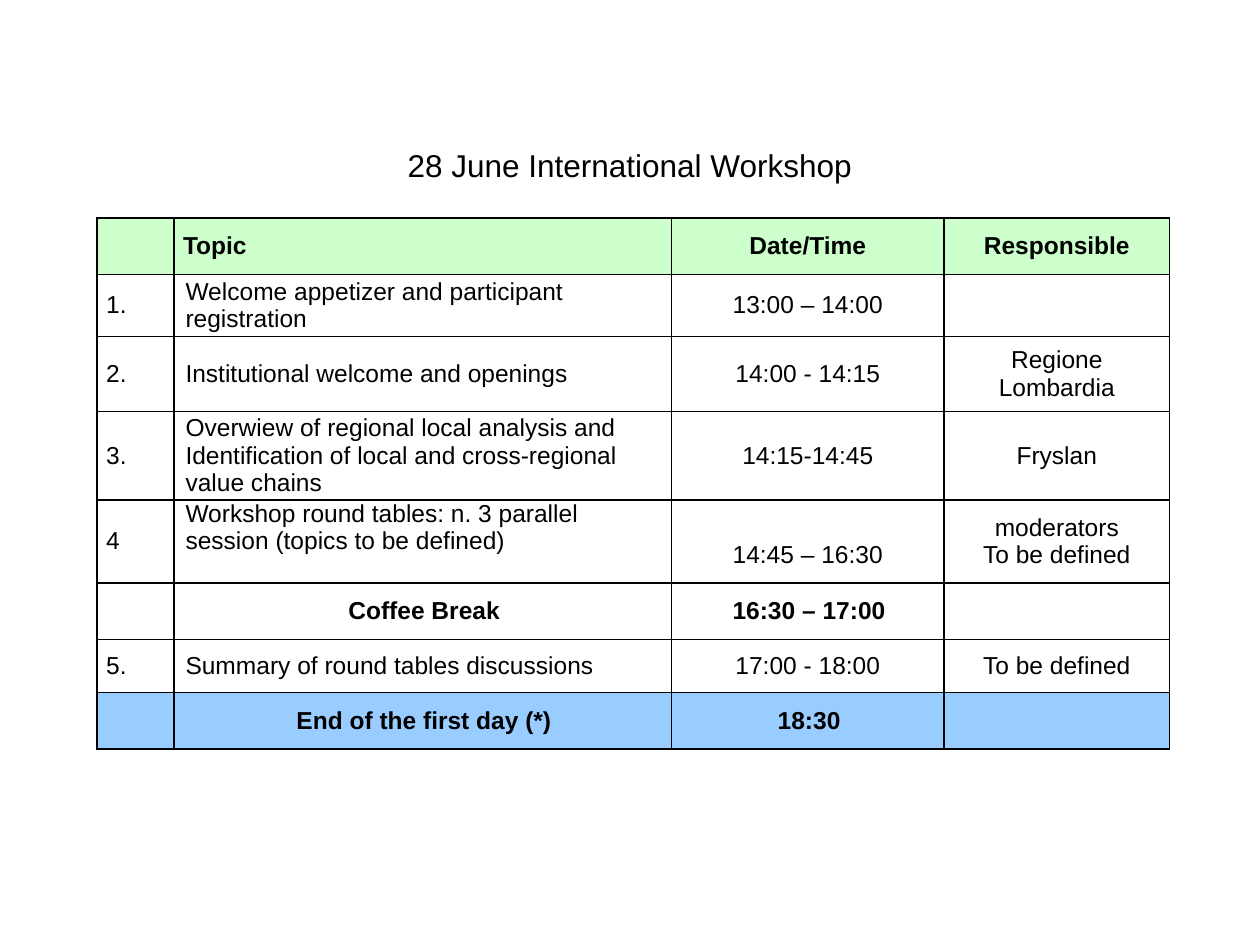
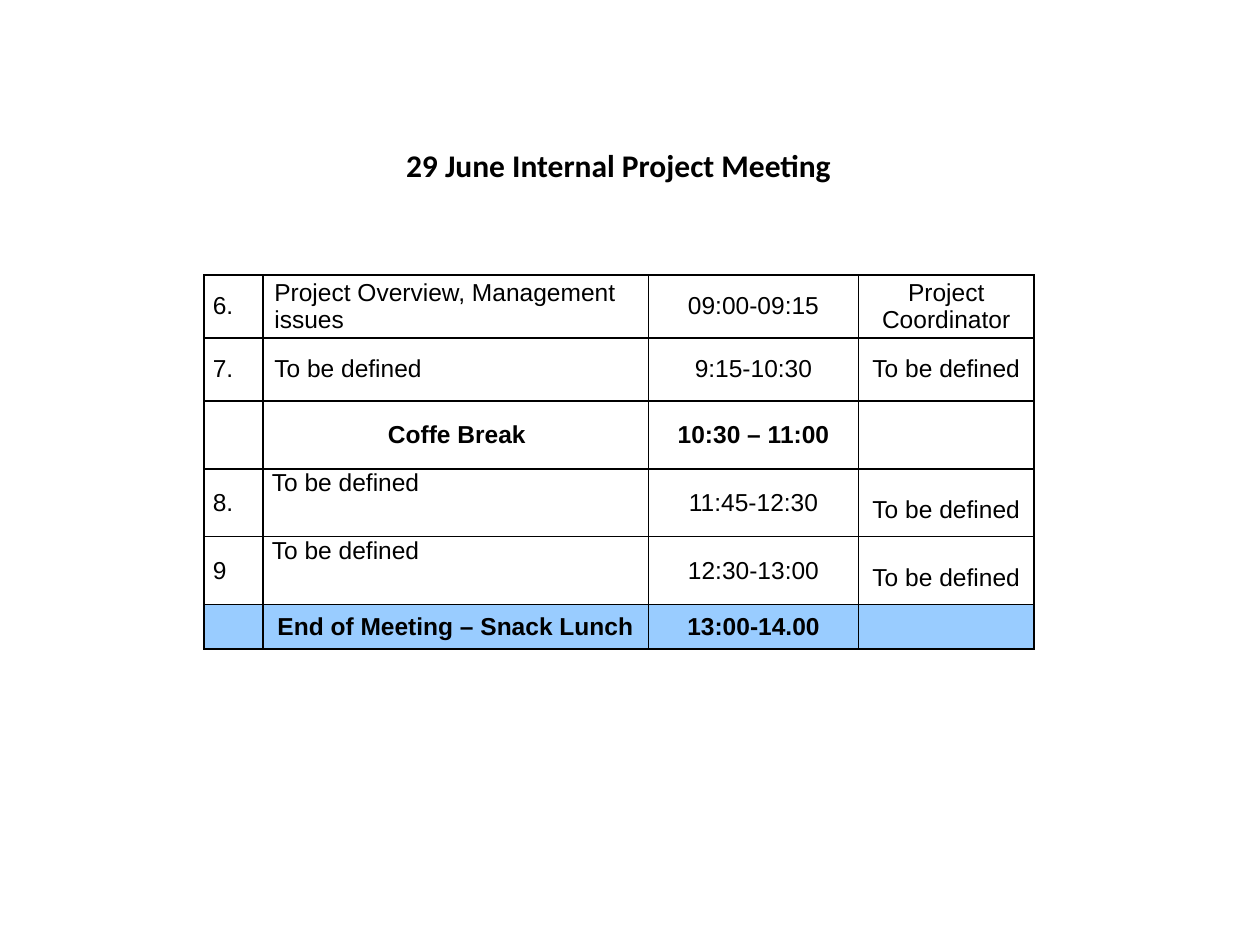
from dataclasses import dataclass
from typing import NamedTuple, Optional

from lxml import etree
from pptx import Presentation
from pptx.dml.color import RGBColor
from pptx.enum.text import MSO_ANCHOR, MSO_AUTO_SIZE, PP_ALIGN
from pptx.oxml.ns import qn
from pptx.util import Cm, Pt

TOP, MIDDLE = MSO_ANCHOR.TOP, MSO_ANCHOR.MIDDLE
LEFT, CENTER = PP_ALIGN.LEFT, PP_ALIGN.CENTER
FIT_SHAPE = MSO_AUTO_SIZE.SHAPE_TO_FIT_TEXT

COLORS = {"text": "000000", "border": "000000",
          "header": "CCFFCC", "end": "99CCFF"}
TITLE_ONLY = 5
TITLE_TOP, TITLE_HEIGHT = Cm(2.82), Cm(1.02)
SIDE = 0.18
TOPIC_SIDE = 0.23
LINE = 0.55
TOPIC = 1


class Entry(NamedTuple):
    text: str
    anchor: MSO_ANCHOR = MIDDLE
    top: float = 0
    left: float = SIDE


class Row(NamedTuple):
    height: float
    cells: tuple
    kind: str = "item"


@dataclass
class Title:
    text: str
    left: float
    width: float
    font: str
    bold: bool


@dataclass
class Agenda:
    title: Title
    left: float
    top: float
    columns: tuple
    rows: list


def topic(text: str, anchor: MSO_ANCHOR = MIDDLE) -> Entry:
    return Entry(text, anchor, left=TOPIC_SIDE)


UNDEFINED = "To be defined"
TOP_TOPIC = Entry(UNDEFINED, TOP)
LOWERED_OWNER = Entry(UNDEFINED, TOP, LINE)

WORKSHOP = Agenda(
    Title("28 June International Workshop", 7.92, 9.55, "Arial", False),
    1.96, 4.39, (1.55, 10.03, 5.49, 4.55),
    [
        Row(1.14, ("", "Topic", "Date/Time", "Responsible"), "header"),
        Row(1.25, ("1.", topic("Welcome appetizer and participant registration"),
                   "13:00 – 14:00", "")),
        Row(1.52, ("2.", topic("Institutional welcome and openings"),
                   "14:00 - 14:15", "Regione Lombardia")),
        Row(1.67, ("3.", topic("Overwiew of regional local analysis and Identification "
                               "of local and cross-regional value chains"),
                   "14:15-14:45", "Fryslan")),
        Row(1.67, ("4", topic("Workshop round tables: n. 3 parallel session "
                              "(topics to be defined)", TOP),
                   Entry("14:45 – 16:30", top=LINE), f"moderators\n{UNDEFINED}")),
        Row(1.14, ("", topic("Coffee Break"), topic("16:30 – 17:00"), ""), "break"),
        Row(1.07, ("5.", topic("Summary of round tables discussions"),
                   "17:00 - 18:00", UNDEFINED)),
        Row(1.14, ("", topic("End of the first day (*)"), topic("18:30"), ""), "end"),
    ],
)

MEETING = Agenda(
    Title("29 June Internal Project Meeting", 7.9, 9.14, "Calibri", True),
    4.11, 5.54, (1.19, 7.77, 4.24, 3.53),
    [
        Row(1.27, ("6.", topic("Project Overview, Management issues"),
                   "09:00-09:15", "Project Coordinator")),
        Row(1.27, ("7.", topic(UNDEFINED), "9:15-10:30", UNDEFINED)),
        Row(1.37, ("", topic("Coffe Break"), "10:30 – 11:00", ""), "break"),
        Row(1.37, ("8.", TOP_TOPIC, "11:45-12:30", LOWERED_OWNER)),
        Row(1.37, ("9", TOP_TOPIC, "12:30-13:00", LOWERED_OWNER)),
        Row(0.89, ("", "End of Meeting – Snack Lunch", "13:00-14.00", ""), "end"),
    ],
)


def apply(target, values: dict) -> None:
    for name, value in values.items():
        setattr(target, name, value)


def format_paragraph(p, align: PP_ALIGN, font: str, size: float, bold: bool) -> None:
    p.alignment = align
    apply(p.font, {"name": font, "size": Pt(size), "bold": bold})
    p.font.color.rgb = RGBColor.from_string(COLORS["text"])


def add_title(slide, title: Title) -> None:
    sp = slide.shapes.title
    apply(sp, {"left": Cm(title.left), "top": TITLE_TOP,
               "width": Cm(title.width), "height": TITLE_HEIGHT})
    tf = sp.text_frame
    tf.text = title.text
    apply(tf, {"word_wrap": False, "auto_size": FIT_SHAPE, "vertical_anchor": MIDDLE})
    format_paragraph(tf.paragraphs[0], CENTER, title.font, 18, title.bold)


def add_borders(cell) -> None:
    tc_pr = cell._tc.get_or_add_tcPr()
    for index, side in enumerate(("lnL", "lnR", "lnT", "lnB")):
        line = etree.Element(qn(f"a:{side}"), w=str(Pt(1)))
        fill = etree.SubElement(line, qn("a:solidFill"))
        etree.SubElement(fill, qn("a:srgbClr"), val=COLORS["border"])
        tc_pr.insert(index, line)


def fill_cell(cell, entry: Entry, kind: str, align: PP_ALIGN) -> None:
    cell.text = entry.text
    apply(cell, {"vertical_anchor": entry.anchor,
                 "margin_left": Cm(entry.left), "margin_right": Cm(SIDE),
                 "margin_top": Cm(entry.top), "margin_bottom": 0})
    for p in cell.text_frame.paragraphs:
        format_paragraph(p, align, "Arial", 14, kind != "item")
    if kind in COLORS:
        cell.fill.solid()
        cell.fill.fore_color.rgb = RGBColor.from_string(COLORS[kind])
    else:
        cell.fill.background()
    add_borders(cell)


def alignment(column: int, kind: str) -> Optional[PP_ALIGN]:
    """Numbers and topics start at the left; breaks and endings are centred."""
    if column < TOPIC or (column == TOPIC and kind in ("item", "header")):
        return LEFT
    return CENTER


def add_agenda_table(slide, agenda: Agenda) -> None:
    table = slide.shapes.add_table(
        len(agenda.rows), len(agenda.columns), Cm(agenda.left), Cm(agenda.top),
        Cm(sum(agenda.columns)), Cm(sum(row.height for row in agenda.rows))).table
    apply(table, {"first_row": False, "horz_banding": False})
    for column, width in zip(table.columns, agenda.columns):
        column.width = Cm(width)
    for r, row in enumerate(agenda.rows):
        table.rows[r].height = Cm(row.height)
        for c, item in enumerate(row.cells):
            entry = item if isinstance(item, Entry) else Entry(item)
            fill_cell(table.cell(r, c), entry, row.kind, alignment(c, row.kind))


def main() -> None:
    prs = Presentation()
    prs.slide_width, prs.slide_height = Cm(25.4), Cm(19.05)
    for agenda in (WORKSHOP, MEETING):
        slide = prs.slides.add_slide(prs.slide_layouts[TITLE_ONLY])
        add_title(slide, agenda.title)
        add_agenda_table(slide, agenda)
    prs.save("out.pptx")


if __name__ == "__main__":
    main()
